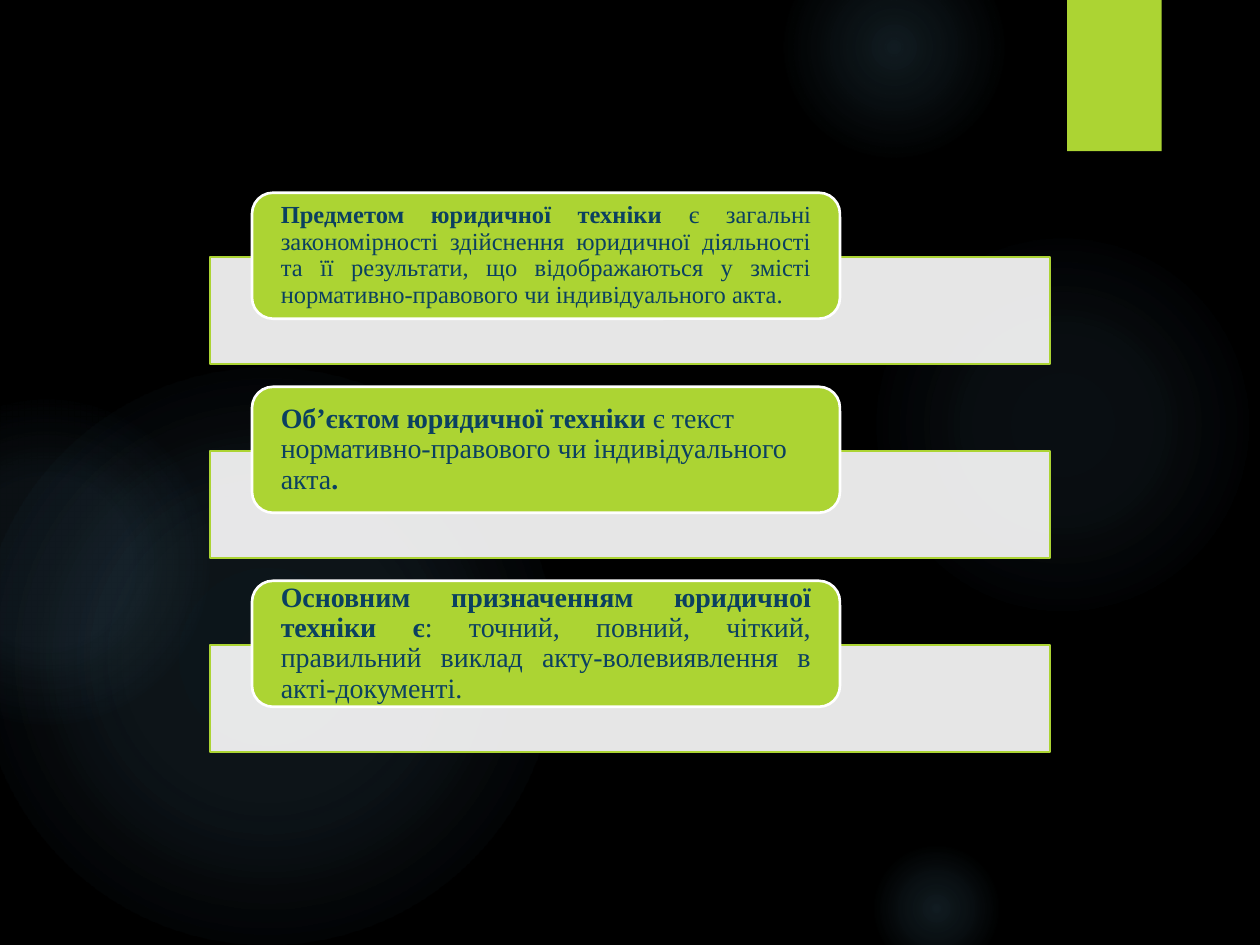
from lxml.etree import SubElement
from pptx import Presentation
from pptx.dml.color import RGBColor
from pptx.enum.shapes import MSO_SHAPE
from pptx.enum.text import MSO_ANCHOR, PP_ALIGN
from pptx.oxml import parse_xml
from pptx.oxml.ns import nsdecls, qn
from pptx.util import Inches, Pt

THEME = {
    "background": "000000", "glow": "7AC4F0", "accent": "ACD433",
    "panel": "FFFFFF", "text": "0B4060", "font": "Times New Roman",
    "line": 1.5, "panel_opacity": 90,
}

# Each statement: type size, alignment, runs of (text, bold)
STATEMENTS = [
    (14, PP_ALIGN.JUSTIFY, [
        ("Предметом юридичної техніки", True),
        (" є загальні закономірності здійснення юридичної діяльності та її "
         "результати, що відображаються у змісті нормативно-правового чи "
         "індивідуального акта.", False)]),
    (16, PP_ALIGN.LEFT, [
        ("Об’єктом юридичної техніки", True),
        (" є текст нормативно-правового чи індивідуального акта", False),
        (".", True)]),
    (16, PP_ALIGN.JUSTIFY, [
        ("Основним призначенням юридичної техніки є", True),
        (": точний, повний, чіткий, правильний виклад акту-волевиявлення "
         "в акті-документі.", False)]),
]

# Each glow: left, top, diameter, opacity at the centre and at 36 %, fade-out stop
GLOWS = [
    (6.89, 1.83, 3.08, 7, 6, 69),
    (6.22, -0.5, 1.75, 14, 7, 73),
    (6.89, 6.67, 1.08, 14, 7, 66),
    (-0.17, 2.92, 4.58, 11, 10, 75),
    (-0.92, 3.17, 2.58, 8, 8, 72),
]

WIDTH, HEIGHT = 10, 7.5
TAB = (8.47, 0, 0.75, 1.2)
PANEL_LEFT, PANEL_WIDTH, PANEL_HEIGHT = WIDTH / 6, WIDTH * 2 / 3, 0.85
LABEL_LEFT, LABEL_WIDTH, LABEL_HEIGHT = WIDTH / 5, PANEL_WIDTH * 0.7, 1
FIRST_LABEL_TOP, ROW_PITCH, PANEL_DROP = 1.53, 1.54, 0.51


def color(name):
    return RGBColor.from_string(THEME[name])


def add_box(slide, kind, place, fill=None, line=None):
    box = slide.shapes.add_shape(kind, *map(Inches, place))
    box.shadow.inherit = False
    if fill:
        box.fill.solid()
        box.fill.fore_color.rgb = color(fill)
    if line:
        box.line.color.rgb = color(line)
        box.line.width = Pt(THEME["line"])
    else:
        box.line.fill.background()
    return box


def add_glow(slide, left, top, diameter, centre, middle, fade):
    glow = add_box(slide, MSO_SHAPE.OVAL, (left, top, diameter, diameter))
    stops = "".join(
        f'<a:gs pos="{position * 1000}"><a:srgbClr val="{THEME["glow"]}">'
        f'<a:alpha val="{opacity * 1000}"/></a:srgbClr></a:gs>'
        for position, opacity in ((0, centre), (36, middle), (fade, 0)))
    gradient = parse_xml(
        f'<a:gradFill {nsdecls("a")} rotWithShape="1"><a:gsLst>{stops}</a:gsLst>'
        '<a:path path="circle"><a:fillToRect l="50000" t="50000" r="50000" '
        'b="50000"/></a:path></a:gradFill>')
    glow._element.spPr.find(qn("a:prstGeom")).addnext(gradient)


def add_panel(slide, top):
    panel = add_box(slide, MSO_SHAPE.RECTANGLE,
                    (PANEL_LEFT, top, PANEL_WIDTH, PANEL_HEIGHT), "panel", "accent")
    fill = panel._element.spPr.find(qn("a:solidFill"))
    SubElement(fill[0], qn("a:alpha"), val=str(THEME["panel_opacity"] * 1000))


def add_label(slide, top, size, alignment, runs):
    label = add_box(slide, MSO_SHAPE.ROUNDED_RECTANGLE,
                    (LABEL_LEFT, top, LABEL_WIDTH, LABEL_HEIGHT), "accent", "panel")
    frame = label.text_frame
    frame.word_wrap = True
    frame.vertical_anchor = MSO_ANCHOR.MIDDLE
    frame.margin_left = frame.margin_right = Inches(0.18)
    frame.margin_top = frame.margin_bottom = 0
    paragraph = frame.paragraphs[0]
    paragraph.alignment = alignment
    paragraph.line_spacing = 0.9
    paragraph.font.name = THEME["font"]
    paragraph.font.size = Pt(size)
    paragraph.font.color.rgb = color("text")
    for text, bold in runs:
        run = paragraph.add_run()
        run.text = text
        run.font.bold = bold


def main():
    deck = Presentation()
    deck.slide_width, deck.slide_height = Inches(WIDTH), Inches(HEIGHT)
    slide = deck.slides.add_slide(deck.slide_layouts[6])
    slide.background.fill.solid()
    slide.background.fill.fore_color.rgb = color("background")

    for glow in GLOWS:
        add_glow(slide, *glow)
    add_box(slide, MSO_SHAPE.RECTANGLE, TAB, "accent")
    for row, statement in enumerate(STATEMENTS):
        top = FIRST_LABEL_TOP + row * ROW_PITCH
        add_panel(slide, top + PANEL_DROP)
        add_label(slide, top, *statement)
    deck.save("out.pptx")


if __name__ == "__main__":
    main()
